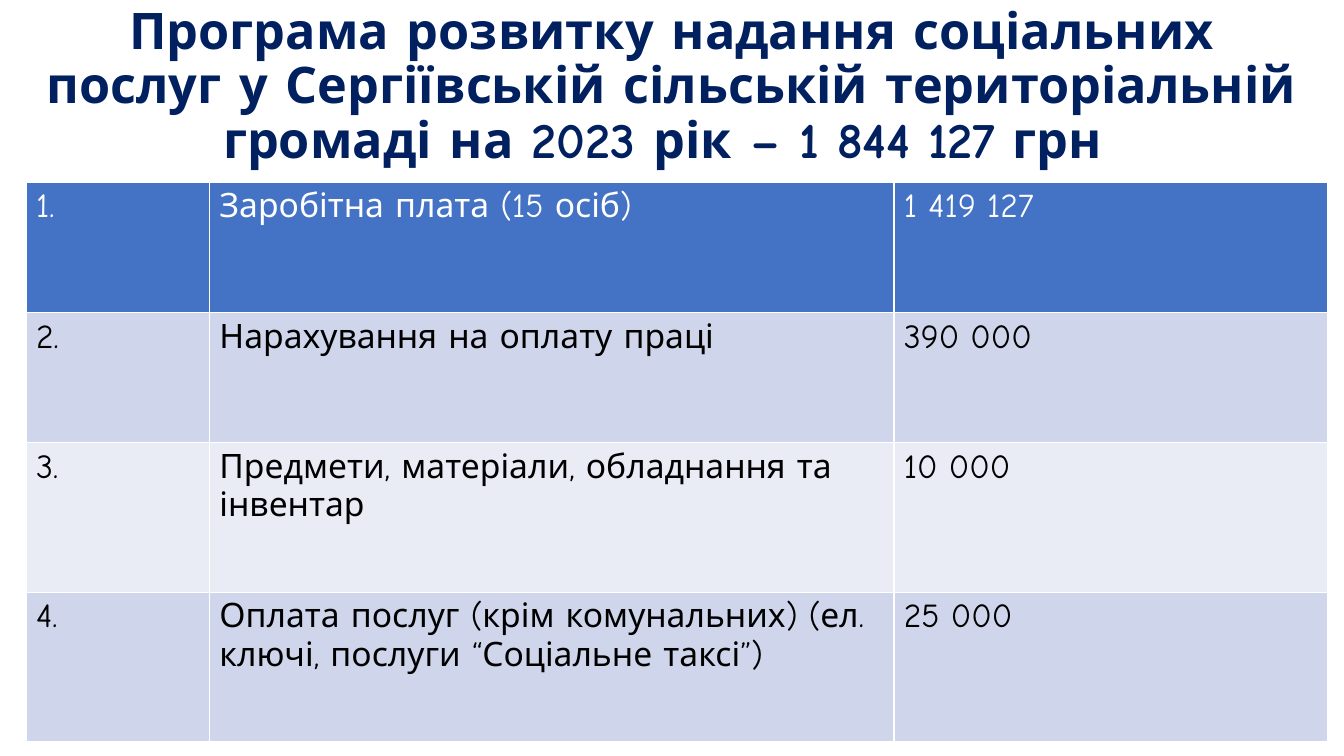
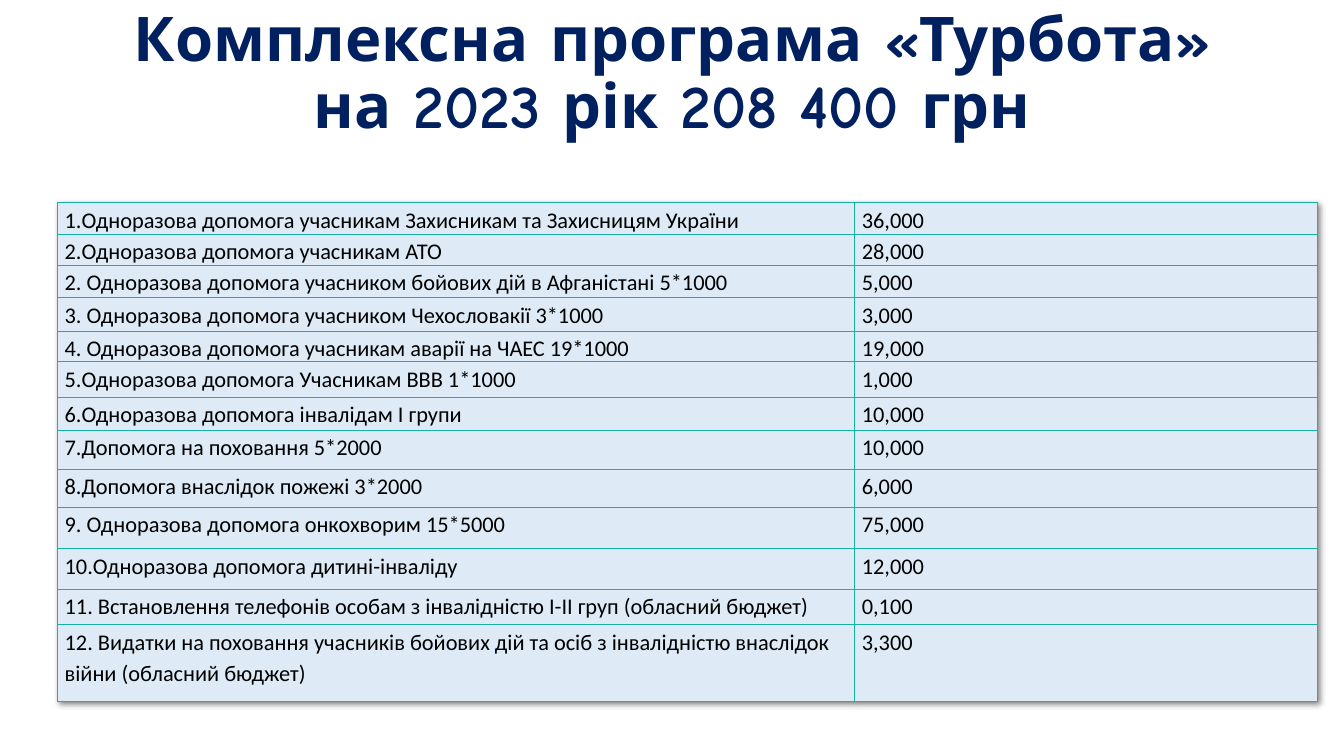
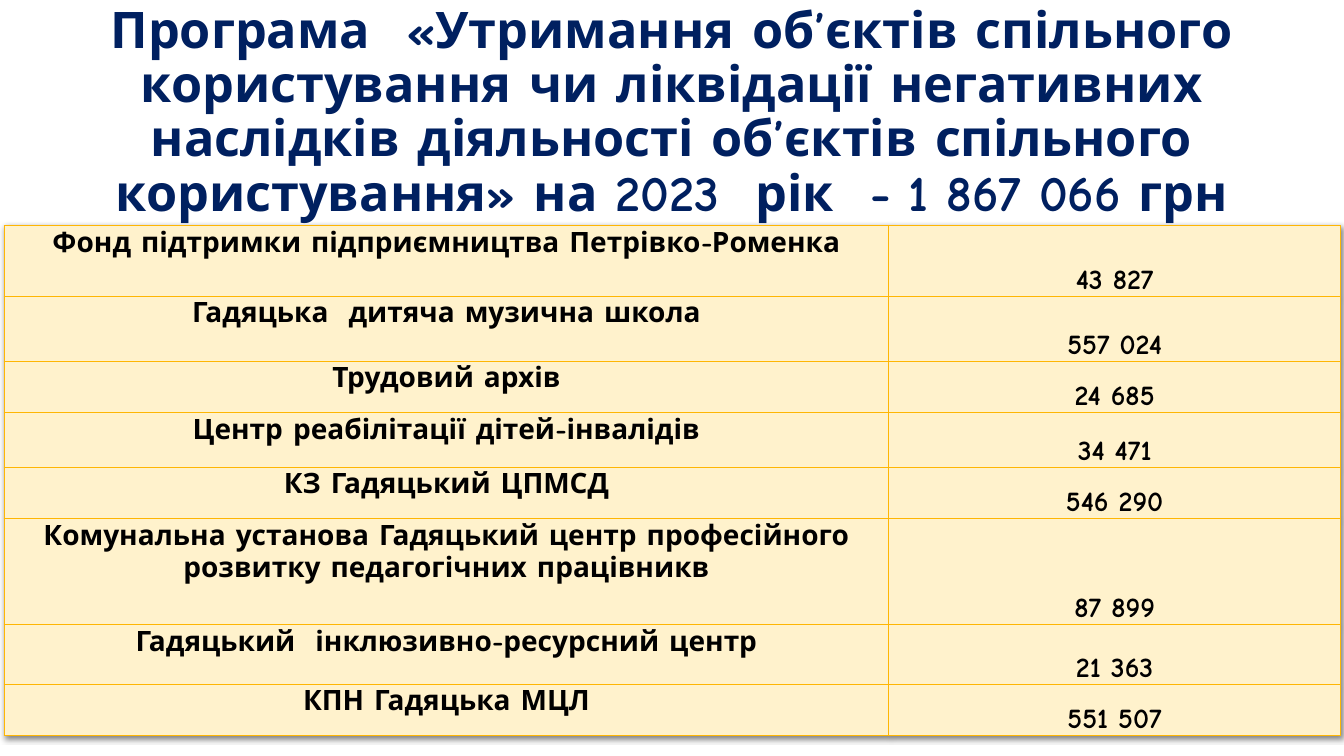
"""Build three slides of social programme budgets for 2023."""
import dataclasses

import lxml.etree
import pptx
import pptx.dml.color
import pptx.enum.text
import pptx.oxml.ns
import pptx.util

Cm = pptx.util.Cm
Pt = pptx.util.Pt
ALIGN = pptx.enum.text.PP_ALIGN
ANCHOR = pptx.enum.text.MSO_ANCHOR
TITLE_FONT = "Comic Neue"
TITLE_COLOR = "002060"
BLACK = "000000"
WHITE = "FFFFFF"


@dataclasses.dataclass
class TableStyle:
    """Look of a table; one entry in fills per row, cycled after the header."""

    font: str
    size: int
    header_fill: str
    band_fills: tuple
    border: str
    border_width: float
    margins: tuple = (0.25, 0.13, 0.25, 0.13)
    header_color: str = BLACK
    bold: bool = False
    align: ALIGN = ALIGN.LEFT
    line_spacing: float = 1.0
    value_anchor: ANCHOR = ANCHOR.TOP
    shadow: bool = False


SERVICES_STYLE = TableStyle(
    TITLE_FONT, 24, "4472C4", ("CFD5EA", "E9EBF5"), WHITE, 1, header_color=WHITE)
CARE_STYLE = TableStyle(
    "Calibri", 16, "DEEBF7", ("DEEBF7",), "16B39E", 0.75,
    margins=(0.18, 0, 0.18, 0), line_spacing=1.15, shadow=True)
FACILITIES_STYLE = TableStyle(
    TITLE_FONT, 20, "FFF2CC", ("FFF2CC",), "FEB604", 0.75,
    margins=(0.03, 0.03, 0.03, 0), bold=True, align=ALIGN.CENTER,
    value_anchor=ANCHOR.BOTTOM, shadow=True)

SERVICES = [
    ("1.", "Заробітна плата (15 осіб)", "1 419 127"),
    ("2.", "Нарахування на оплату праці", "390 000"),
    ("3.", "Предмети, матеріали, обладнання та інвентар", "10 000"),
    ("4.", "Оплата послуг (крім комунальних) (ел. ключі, послуги “Соціальне таксі”)", "25 000"),
]
CARE = [
    ("1.Одноразова допомога учасникам Захисникам та Захисницям України", "36,000"),
    ("2.Одноразова допомога учасникам АТО", "28,000"),
    ("2. Одноразова допомога учасником бойових дій в Афганістані 5*1000", "5,000"),
    ("3. Одноразова допомога учасником Чехословакії 3*1000", "3,000"),
    ("4. Одноразова допомога учасникам аварії на ЧАЕС 19*1000", "19,000"),
    ("5.Одноразова допомога Учасникам ВВВ 1*1000", "1,000"),
    ("6.Одноразова допомога інвалідам І групи", "10,000"),
    ("7.Допомога на поховання 5*2000", "10,000"),
    ("8.Допомога внаслідок пожежі 3*2000", "6,000"),
    ("9. Одноразова допомога онкохворим 15*5000", "75,000"),
    ("10.Одноразова допомога дитині-інваліду", "12,000"),
    ("11. Встановлення телефонів особам з інвалідністю І-ІІ груп (обласний бюджет)", "0,100"),
    ("12. Видатки на поховання учасників бойових дій та осіб з інвалідністю внаслідок "
     "війни (обласний бюджет)", "3,300"),
]
FACILITIES = [
    ("Фонд підтримки підприємництва Петрівко-Роменка", "43 827"),
    ("Гадяцька  дитяча музична школа", "557 024"),
    ("Трудовий архів", "24 685"),
    ("Центр реабілітації дітей-інвалідів", "34 471"),
    ("КЗ Гадяцький ЦПМСД", "546 290"),
    ("Комунальна установа Гадяцький центр професійного розвитку педагогічних працівникв",
     "87 899"),
    ("Гадяцький  інклюзивно-ресурсний центр", "21 363"),
    ("КПН Гадяцька МЦЛ", "551 507"),
]


def rgb(value):
    """Turn a hex string into a colour."""
    return pptx.dml.color.RGBColor.from_string(value)


def add_element(parent, tag, **attributes):
    """Append a drawing element with the given attributes."""
    element = lxml.etree.SubElement(parent, pptx.oxml.ns.qn(tag))
    for name, value in attributes.items():
        element.set(name, str(value))
    return element


def style_paragraph(paragraph, font, size, color, bold, align, line_spacing):
    """Set the alignment, spacing and font of a paragraph."""
    paragraph.alignment = align
    paragraph.line_spacing = line_spacing
    paragraph.font.name = font
    paragraph.font.size = Pt(size)
    paragraph.font.bold = bold
    paragraph.font.color.rgb = rgb(color)


def add_title(slide, box, text, size):
    """Place a centred bold title in a box given in centimetres."""
    frame = slide.shapes.add_textbox(*map(Cm, box)).text_frame
    frame.word_wrap = True
    frame.vertical_anchor = ANCHOR.MIDDLE
    paragraph = frame.paragraphs[0]
    paragraph.text = text
    style_paragraph(paragraph, TITLE_FONT, size, TITLE_COLOR, True, ALIGN.CENTER, 0.9)


def add_borders(cell, color, width):
    """Draw a line on all four sides of a cell."""
    properties = cell._tc.get_or_add_tcPr()
    for side in "LRTB":
        line = add_element(properties, f"a:ln{side}", w=int(Pt(width)))
        add_element(add_element(line, "a:solidFill"), "a:srgbClr", val=color)


def add_table_shadow(table):
    """Give a table a soft shadow towards the lower right."""
    properties = table._tbl.tblPr
    effects = add_element(properties, "a:effectLst")
    properties.insert(0, effects)
    shadow = add_element(effects, "a:outerShdw", blurRad=int(Pt(4)), dist=int(Pt(2)),
                         dir=2700000, algn="tl", rotWithShape=0)
    add_element(add_element(shadow, "a:srgbClr", val=BLACK), "a:alpha", val=50000)


def fill_cell(cell, text, style, is_header, fill, anchor):
    """Write and format one table cell."""
    cell.margin_left, cell.margin_top, cell.margin_right, cell.margin_bottom = map(
        Cm, style.margins)
    cell.vertical_anchor = anchor
    add_borders(cell, style.border, style.border_width)
    cell.fill.solid()
    cell.fill.fore_color.rgb = rgb(fill)
    paragraph = cell.text_frame.paragraphs[0]
    paragraph.text = text
    style_paragraph(paragraph, style.font, style.size,
                    style.header_color if is_header else BLACK,
                    style.bold, style.align, style.line_spacing)


def add_budget_table(slide, left, top, widths, heights, rows, style):
    """Place a budget table with its values in the last column."""
    table = slide.shapes.add_table(
        len(rows), len(widths), Cm(left), Cm(top),
        Cm(sum(widths)), Cm(sum(heights))).table
    table.first_row = table.horz_banding = False
    for column, width in zip(table.columns, widths):
        column.width = Cm(width)
    for index, (row, height, texts) in enumerate(zip(table.rows, heights, rows)):
        row.height = Cm(height)
        bands = style.band_fills
        fill = bands[(index - 1) % len(bands)] if index else style.header_fill
        for position, (cell, text) in enumerate(zip(row.cells, texts), 1):
            anchor = style.value_anchor if position == len(texts) else ANCHOR.TOP
            fill_cell(cell, text, style, index == 0, fill, anchor)
    if style.shadow:
        add_table_shadow(table)


def build_services(slide):
    """Build the slide on the social services programme."""
    add_title(slide, (0.66, 0.36, 32.54, 3.68),
              "Програма розвитку надання соціальних послуг у Сергіївській сільській "
              "територіальній громаді на 2023 рік – 1 844 127 грн ", 36)
    add_budget_table(slide, 0.66, 4.6, (4.62, 17.25, 10.92), (3.28, 3.28, 3.76, 3.76),
                     SERVICES, SERVICES_STYLE)


def build_care(slide):
    """Build the slide on the care programme."""
    add_title(slide, (2.34, 0.05, 29.21, 3.68),
              "Комплексна програма «Турбота» на 2023 рік 208 400 грн", 44)
    heights = (0.79, 0.79, 0.81, 0.84, 0.76, 0.89, 0.84, 0.97, 0.97, 1.04, 1.02, 0.89, 1.93)
    add_budget_table(slide, 1.45, 5.11, (20.09, 11.66), heights, CARE, CARE_STYLE)


def build_facilities(slide):
    """Build the slide on shared facilities."""
    add_title(slide, (0, 1.02, 33.87, 3.68),
              "Програма  «Утримання об’єктів спільного користування чи ліквідації "
              "негативних наслідків діяльності об’єктів спільного користування» "
              "на 2023  рік  - 1 867 066 грн", 36)
    heights = (1.78, 1.63, 1.3, 1.37, 1.3, 2.67, 1.5, 1.3)
    add_budget_table(slide, 0.1, 5.69, (22.3, 11.38), heights, FACILITIES, FACILITIES_STYLE)


def main():
    """Create and save the presentation."""
    presentation = pptx.Presentation()
    presentation.slide_width = Cm(33.87)
    presentation.slide_height = Cm(19.05)
    for build in (build_services, build_care, build_facilities):
        build(presentation.slides.add_slide(presentation.slide_layouts[6]))
    presentation.save("out.pptx")


if __name__ == "__main__":
    main()
